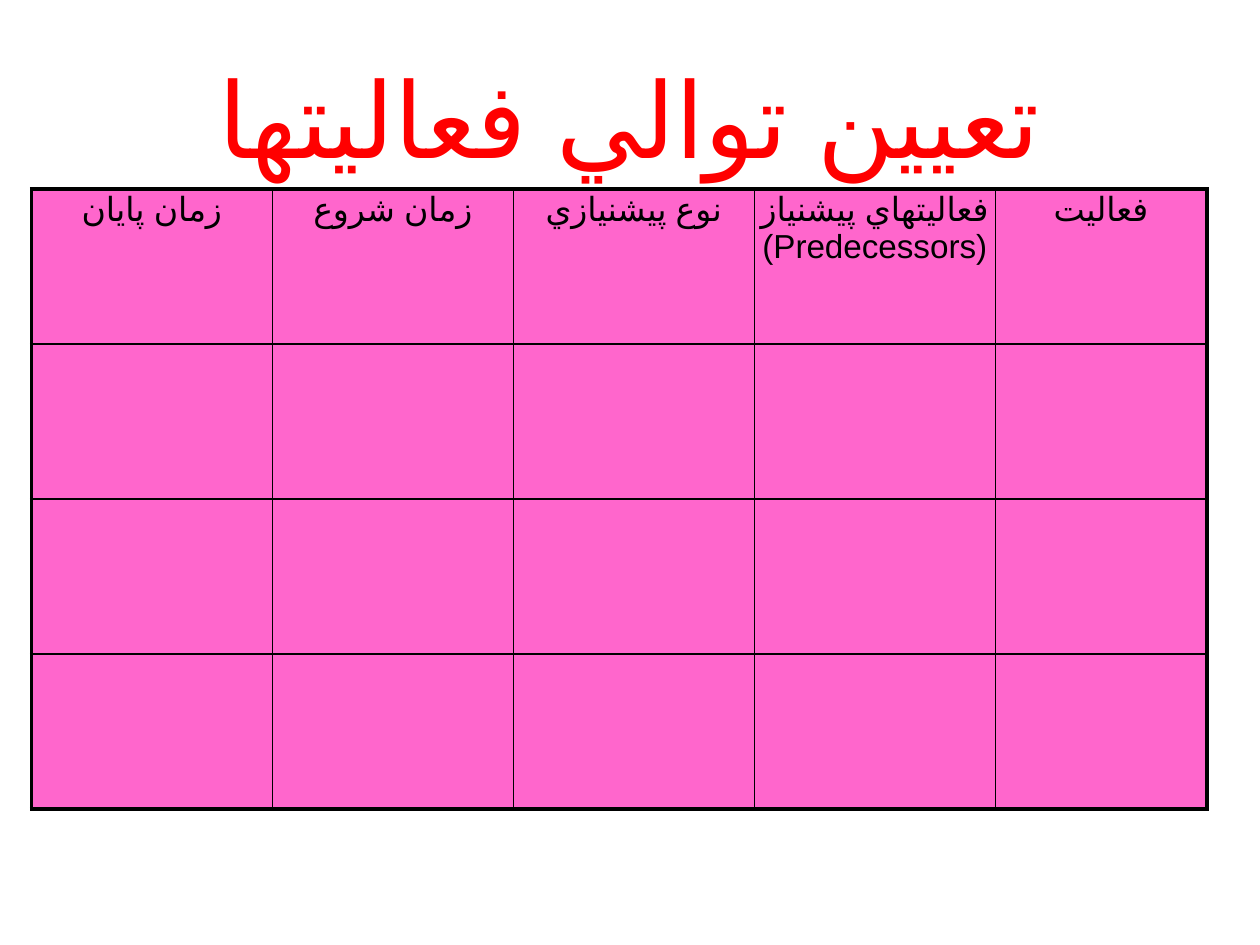
"""Build a slide with a right-to-left table for sequencing project activities."""
import pptx
import pptx.dml.color
import pptx.enum.lang
import pptx.enum.text
import pptx.oxml
import pptx.oxml.ns
import pptx.util

Inches = pptx.util.Inches
Pt = pptx.util.Pt
RGBColor = pptx.dml.color.RGBColor
ANCHOR = pptx.enum.text.MSO_ANCHOR
FARSI = pptx.enum.lang.MSO_LANGUAGE_ID.FARSI

TITLE = "تعيين توالي فعاليتها"
HEADINGS = [
    "زمان پايان",
    "زمان شروع",
    "نوع پيشنيازي",
    "فعاليتهاي پيشنياز (Predecessors)",
    "فعاليت",
]
TABLE_WIDTH = 9.33
ACTIVITY_WIDTH = 1.68
ROW_COUNT = 4
ROW_HEIGHT = 1.23

FONT = "Arial"
RED = RGBColor(0xFF, 0x00, 0x00)
BLACK = RGBColor(0x00, 0x00, 0x00)
PINK = RGBColor(0xFF, 0x66, 0xCC)
OUTER_WIDTH, INNER_WIDTH = 2.25, 1

TITLE_FONT = {"name": FONT, "size": Pt(60), "bold": False, "language_id": FARSI}
HEADING_FONT = {**TITLE_FONT, "size": Pt(19)}
TITLE_PLACE = {"left": Inches(0.5), "top": Inches(0.3),
               "width": Inches(9), "height": Inches(1.25)}
CELL_MARGINS = {"margin_left": Inches(0.04), "margin_top": Inches(0.02),
                "margin_right": Inches(0.04), "margin_bottom": Inches(0.02)}
TABLE_FLAGS = {"first_row": False, "horz_banding": False}


def apply(target, values):
    for name, value in values.items():
        setattr(target, name, value)


def write_rtl(frame, wording, font_format, color):
    paragraph = frame.paragraphs[0]
    paragraph.alignment = pptx.enum.text.PP_ALIGN.CENTER
    paragraph._p.get_or_add_pPr().set("rtl", "1")
    run = paragraph.add_run()
    run.text = wording
    apply(run.font, font_format)
    run.font.color.rgb = color
    script_font = pptx.oxml.parse_xml(
        f'<a:cs {pptx.oxml.ns.nsdecls("a")} typeface="{FONT}"/>')
    run._r.get_or_add_rPr().append(script_font)


def set_borders(cell, widths):
    properties = cell._tc.get_or_add_tcPr()
    for position, (side, width) in enumerate(widths.items()):
        border = pptx.oxml.parse_xml(
            f'<a:ln{side} {pptx.oxml.ns.nsdecls("a")} w="{int(Pt(width))}">'
            f'<a:solidFill><a:srgbClr val="{BLACK}"/></a:solidFill></a:ln{side}>')
        properties.insert(position, border)


def edge_width(is_outer):
    return OUTER_WIDTH if is_outer else INNER_WIDTH


def add_activity_table(slide):
    last_row, last_column = ROW_COUNT - 1, len(HEADINGS) - 1
    detail_width = (TABLE_WIDTH - ACTIVITY_WIDTH) / last_column
    activities = slide.shapes.add_table(
        ROW_COUNT, len(HEADINGS), Inches(0.25), Inches(1.5),
        Inches(TABLE_WIDTH), Inches(ROW_COUNT * ROW_HEIGHT)).table
    apply(activities, TABLE_FLAGS)
    for c, column in enumerate(activities.columns):
        column.width = Inches(ACTIVITY_WIDTH if c == last_column else detail_width)
    for r, row in enumerate(activities.rows):
        row.height = Inches(ROW_HEIGHT)
        for c, cell in enumerate(row.cells):
            apply(cell, CELL_MARGINS)
            cell.fill.solid()
            cell.fill.fore_color.rgb = PINK
            set_borders(cell, {"L": edge_width(c == 0),
                               "R": edge_width(c == last_column),
                               "T": edge_width(r == 0),
                               "B": edge_width(r == last_row)})
            if r == 0:
                write_rtl(cell.text_frame, HEADINGS[c], HEADING_FONT, BLACK)


def main():
    deck = pptx.Presentation()
    deck.slide_width, deck.slide_height = Inches(10), Inches(7.5)
    slide = deck.slides.add_slide(deck.slide_layouts.get_by_name("Title Only"))
    heading = slide.shapes.title
    apply(heading, TITLE_PLACE)
    heading.text_frame.vertical_anchor = ANCHOR.MIDDLE
    write_rtl(heading.text_frame, TITLE, TITLE_FONT, RED)
    add_activity_table(slide)
    deck.save("out.pptx")


if __name__ == "__main__":
    main()
